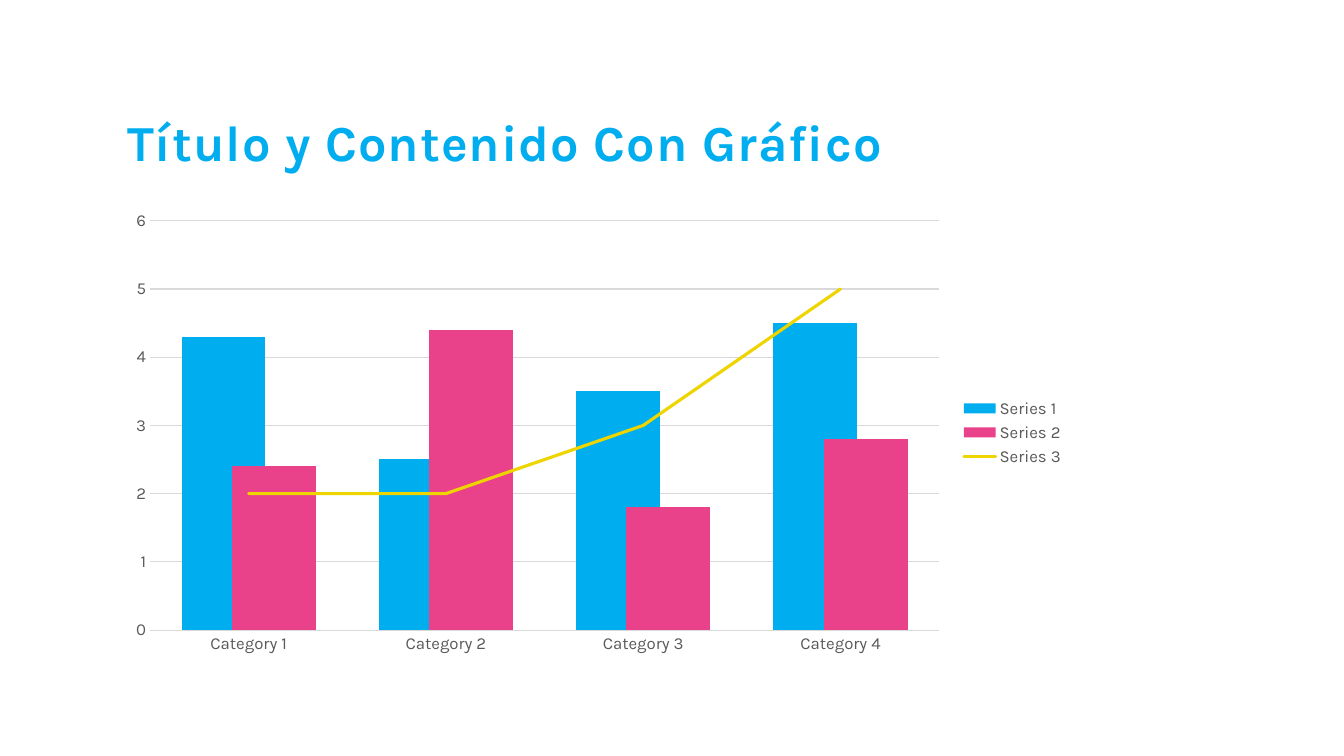
import pptx
import pptx.chart.data
import pptx.dml.color
import pptx.enum.chart
import pptx.enum.text
import pptx.oxml
import pptx.oxml.ns
import pptx.util
from pptx.util import Inches

FONT = "Karla"
CYAN, PINK, YELLOW = "00AEEF", "EA428A", "EED500"
LABEL_GREY, RULE_GREY = "595959", "D9D9D9"
CATEGORIES = ["Category 1", "Category 2", "Category 3", "Category 4"]
SERIES = {
    "Series 1": (4.3, 2.5, 3.5, 4.5),
    "Series 2": (2.4, 4.4, 1.8, 2.8),
    "Series 3": (2, 2, 3, 5),
}


def rgb(value):
    return pptx.dml.color.RGBColor.from_string(value)


def style_font(font, size, color, bold=False):
    font.name = FONT
    font.size = pptx.util.Pt(size)
    font.bold = bold
    font.color.rgb = rgb(color)


def style_line(line, color, width):
    line.color.rgb = rgb(color)
    line.width = pptx.util.Pt(width)


def write_text(shape, text, *, size, color, bold=False, line_spacing=1.0, tracking=0):
    """Fill a shape with one paragraph; tracking is in points."""
    frame = shape.text_frame
    frame.word_wrap = True
    frame.auto_size = pptx.enum.text.MSO_AUTO_SIZE.NONE
    frame.vertical_anchor = pptx.enum.text.MSO_ANCHOR.BOTTOM
    paragraph = frame.paragraphs[0]
    paragraph.alignment = pptx.enum.text.PP_ALIGN.LEFT
    paragraph.line_spacing = line_spacing
    run = paragraph.add_run()
    run.text = text
    style_font(run.font, size, color, bold)
    run.font._element.set("spc", str(int(tracking * 100)))


def add_title(slide, text):
    title = slide.shapes.title
    title.left, title.top = Inches(1.16), Inches(0.58)
    title.width, title.height = Inches(9.5), Inches(1.17)
    write_text(title, text, size=36, color=CYAN, bold=True,
               line_spacing=0.8, tracking=0.75)


def move_last_series_to_line(chart):
    """Turn the last column series into a line on the same axes."""
    bar_plot = chart._chartSpace.find(".//" + pptx.oxml.ns.qn("c:barChart"))
    series = bar_plot.findall(pptx.oxml.ns.qn("c:ser"))[-1]
    invert = series.find(pptx.oxml.ns.qn("c:invertIfNegative"))
    if invert is not None:
        series.remove(invert)
    line_plot = pptx.oxml.parse_xml(
        f'<c:lineChart {pptx.oxml.ns.nsdecls("c")}>'
        '<c:grouping val="standard"/><c:varyColors val="0"/>'
        '<c:marker val="1"/></c:lineChart>')
    line_plot.insert(2, series)
    for axis_id in bar_plot.findall(pptx.oxml.ns.qn("c:axId")):
        pptx.oxml.ns.qn("c:axId")
        line_plot.append(pptx.oxml.parse_xml(
            f'<c:axId {pptx.oxml.ns.nsdecls("c")} val="{axis_id.get("val")}"/>'))
    bar_plot.addnext(line_plot)


def style_axis(axis):
    axis.major_tick_mark = pptx.enum.chart.XL_TICK_MARK.NONE
    axis.minor_tick_mark = pptx.enum.chart.XL_TICK_MARK.NONE
    style_font(axis.tick_labels.font, 12, LABEL_GREY)


def style_axes(chart):
    categories, values = chart.category_axis, chart.value_axis
    style_axis(categories)
    style_line(categories.format.line, RULE_GREY, 0.75)
    style_axis(values)
    values.minimum_scale, values.maximum_scale, values.major_unit = 0, 6, 1
    values.format.line.fill.background()
    values.has_major_gridlines = True
    style_line(values.major_gridlines.format.line, RULE_GREY, 0.75)


def style_legend(chart):
    chart.has_legend = True
    chart.legend.position = pptx.enum.chart.XL_LEGEND_POSITION.RIGHT
    chart.legend.include_in_layout = False
    style_font(chart.legend.font, 12, LABEL_GREY)


def add_combined_chart(slide):
    data = pptx.chart.data.CategoryChartData()
    data.categories = CATEGORIES
    for name, values in SERIES.items():
        data.add_series(name, values)
    chart = slide.shapes.add_chart(
        pptx.enum.chart.XL_CHART_TYPE.COLUMN_CLUSTERED,
        Inches(1.16), Inches(2), Inches(9.5), Inches(4.58), data).chart
    style_font(chart.font, 10, "000000")
    chart.has_title = False
    move_last_series_to_line(chart)

    columns, trend = chart.plots
    columns.vary_by_categories = False
    columns.gap_width, columns.overlap = 75, 40
    for series, color in zip(columns.series, (CYAN, PINK)):
        series.format.fill.solid()
        series.format.fill.fore_color.rgb = rgb(color)
        series.invert_if_negative = False
    for series in trend.series:
        style_line(series.format.line, YELLOW, 2.25)
        series.format.line._ln.set("cap", "rnd")
        series.marker.style = pptx.enum.chart.XL_MARKER_STYLE.NONE
        series.smooth = False

    style_axes(chart)
    style_legend(chart)


def main():
    deck = pptx.Presentation()
    deck.slide_width, deck.slide_height = Inches(13.33), Inches(7.5)
    slide = deck.slides.add_slide(deck.slide_layouts.get_by_name("Title Only"))
    add_title(slide, "Título y Contenido Con Gráfico")
    add_combined_chart(slide)
    deck.save("out.pptx")


if __name__ == "__main__":
    main()
